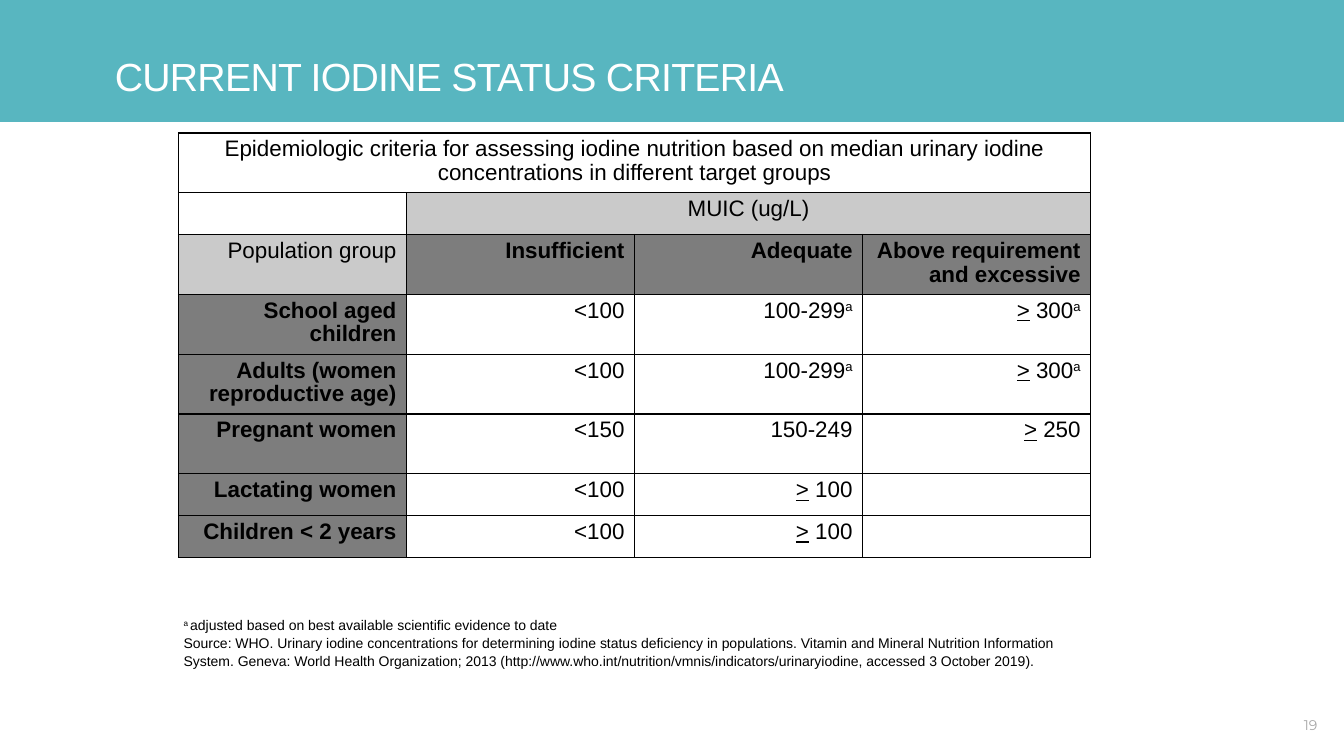
from dataclasses import dataclass

from lxml import etree
from pptx import Presentation
from pptx.dml.color import RGBColor
from pptx.enum.shapes import MSO_SHAPE
from pptx.enum.text import MSO_ANCHOR, PP_ALIGN
from pptx.oxml.ns import qn
from pptx.util import Pt

RECTANGLE = MSO_SHAPE.RECTANGLE
TOP, BOTTOM = MSO_ANCHOR.TOP, MSO_ANCHOR.BOTTOM
LEFT, CENTER, RIGHT = PP_ALIGN.LEFT, PP_ALIGN.CENTER, PP_ALIGN.RIGHT
TITLE_ONLY = 5


@dataclass(frozen=True)
class Theme:
    teal: str = "58B6C0"
    white: str = "FFFFFF"
    black: str = "000000"
    light: str = "CACACA"
    dark: str = "7D7D7D"
    muted: str = "A7A7A7"
    font: str = "Arial"
    number_font: str = "Montserrat"
    title_size: int = 28
    table_size: int = 16
    note_size: int = 10


THEME = Theme()
RAISED = {"baseline": "30000"}
NOTE_MARK = ("a", RAISED)


def at_least(value):
    return [(">", {"u": "sng"}), (f" {value}", {})]


# Table content: a cell is plain text or a list of (text, run attributes)
CAPTION = ("Epidemiologic criteria for assessing iodine nutrition based on "
           "median urinary iodine concentrations in different target groups")
HEADINGS = ["Population group", "Insufficient", "Adequate",
            "Above requirement and excessive"]
ADJUSTED = ["<100", [("100-299", {}), NOTE_MARK], at_least(300) + [NOTE_MARK]]
INFANT = ["<100", at_least(100), ""]
GROUPS = [
    ["School aged children", *ADJUSTED],
    ["Adults (women reproductive age)", *ADJUSTED],
    ["Pregnant women", "<150", "150-249", at_least(250)],
    ["Lactating women", *INFANT],
    ["Children < 2 years", *INFANT],
]
ROW_HEIGHTS = [42.75, 29.75, 42.75, 42.75, 42.75, 42.75, 29.75, 29.75]
FOOTNOTES = [
    [("a ", RAISED),
     ("adjusted based on best available scientific evidence to date", {})],
    "Source: WHO. Urinary iodine concentrations for determining iodine status "
    "deficiency in populations. Vitamin and Mineral Nutrition Information "
    "System. Geneva: World Health Organization; 2013 "
    "(http://www.who.int/nutrition/vmnis/indicators/urinaryiodine, "
    "accessed 3 October 2019).",
]


def write(paragraph, content, size, color=THEME.black, font=THEME.font,
          align=LEFT, bold=False, spacing=1.0):
    paragraph.alignment = align
    paragraph.line_spacing = spacing
    pieces = [(content, {})] if isinstance(content, str) else content
    for text, attributes in pieces:
        run = paragraph.add_run()
        run.text = text
        formats = {"name": font, "size": Pt(size), "bold": bold}
        for name, value in formats.items():
            setattr(run.font, name, value)
        run.font.color.rgb = RGBColor.from_string(color)
        for name, value in attributes.items():
            run.font._element.set(name, value)


def set_frame(frame, inset, anchor=TOP, wrap=True):
    formats = {"margin_left": Pt(inset), "margin_top": Pt(inset),
               "margin_right": Pt(inset), "margin_bottom": Pt(inset),
               "vertical_anchor": anchor, "word_wrap": wrap}
    for name, value in formats.items():
        setattr(frame, name, value)


def add_header(slide, left, top, width, height):
    # Band behind the title
    band = slide.shapes.add_shape(RECTANGLE, Pt(left), Pt(top),
                                  Pt(width), Pt(height))
    band.shadow.inherit = False
    band.fill.solid()
    band.fill.fore_color.rgb = RGBColor.from_string(THEME.teal)
    band.line.fill.background()
    # Title
    title = slide.shapes.title
    title._element.addprevious(band._element)
    title.left, title.top = Pt(left + 82), Pt(top + 31.5)
    title.width, title.height = Pt(width - 166), Pt(39.75)
    set_frame(title.text_frame, 0, BOTTOM)
    write(title.text_frame.paragraphs[0],
          [("CURRENT IODINE STATUS CRITERIA", {"spc": "-50"})],
          THEME.title_size, THEME.white)


def add_borders(cell):
    properties = cell._tc.get_or_add_tcPr()
    for position, side in enumerate(("a:lnL", "a:lnR", "a:lnT", "a:lnB")):
        line = etree.Element(qn(side), w=str(Pt(1)))
        fill = etree.SubElement(line, qn("a:solidFill"))
        etree.SubElement(fill, qn("a:srgbClr"), val=THEME.black)
        properties.insert(position, line)


def fill_cell(cell, content, fill=THEME.white, align=RIGHT, bold=False):
    cell.fill.solid()
    cell.fill.fore_color.rgb = RGBColor.from_string(fill)
    if content:
        write(cell.text_frame.paragraphs[0], content, THEME.table_size,
              align=align, bold=bold, spacing=0.95)


def add_criteria_table(slide, left, top, width):
    table = slide.shapes.add_table(
        len(ROW_HEIGHTS), len(HEADINGS), Pt(left), Pt(top),
        Pt(width), Pt(sum(ROW_HEIGHTS))).table
    table.first_row = table.horz_banding = False
    for column in table.columns:
        column.width = Pt(width / len(HEADINGS))
    for row, height in zip(table.rows, ROW_HEIGHTS):
        row.height = Pt(height)
    for cell in table.iter_cells():
        add_borders(cell)
    # Caption and measure rows
    table.cell(0, 0).merge(table.cell(0, 3))
    table.cell(1, 1).merge(table.cell(1, 3))
    fill_cell(table.cell(0, 0), CAPTION, align=CENTER)
    fill_cell(table.cell(1, 0), "")
    fill_cell(table.cell(1, 1), "MUIC (ug/L)", THEME.light, CENTER)
    # Column headings and groups: labels are dark and bold
    for row, contents in enumerate([HEADINGS, *GROUPS], start=2):
        for column, content in enumerate(contents):
            if row == 2 and column == 0:
                fill_cell(table.cell(row, column), content, THEME.light)
            elif row == 2 or column == 0:
                fill_cell(table.cell(row, column), content, THEME.dark,
                          bold=True)
            else:
                fill_cell(table.cell(row, column), content)


def add_footnotes(slide, left, top, width, height):
    frame = slide.shapes.add_textbox(Pt(left), Pt(top), Pt(width),
                                     Pt(height)).text_frame
    set_frame(frame, 3.6)
    for index, note in enumerate(FOOTNOTES):
        paragraph = frame.add_paragraph() if index else frame.paragraphs[0]
        write(paragraph, note, THEME.note_size, spacing=1.05)


def add_page_number(slide, left, top, width, height):
    frame = slide.shapes.add_textbox(Pt(left), Pt(top), Pt(width),
                                     Pt(height)).text_frame
    set_frame(frame, 0, wrap=False)
    write(frame.paragraphs[0], "19", THEME.note_size, THEME.muted,
          THEME.number_font, CENTER)


def main():
    deck = Presentation()
    deck.slide_width, deck.slide_height = Pt(960), Pt(540)
    slide = deck.slides.add_slide(deck.slide_layouts[TITLE_ONLY])
    add_header(slide, 0, 0, 960, 87)
    add_criteria_table(slide, 127.5, 95, 651.6)
    add_footnotes(slide, 127.5, 436.5, 651.6, 55.5)
    add_page_number(slide, 929.5, 512, 13.5, 12)
    deck.save("out.pptx")


if __name__ == "__main__":
    main()
